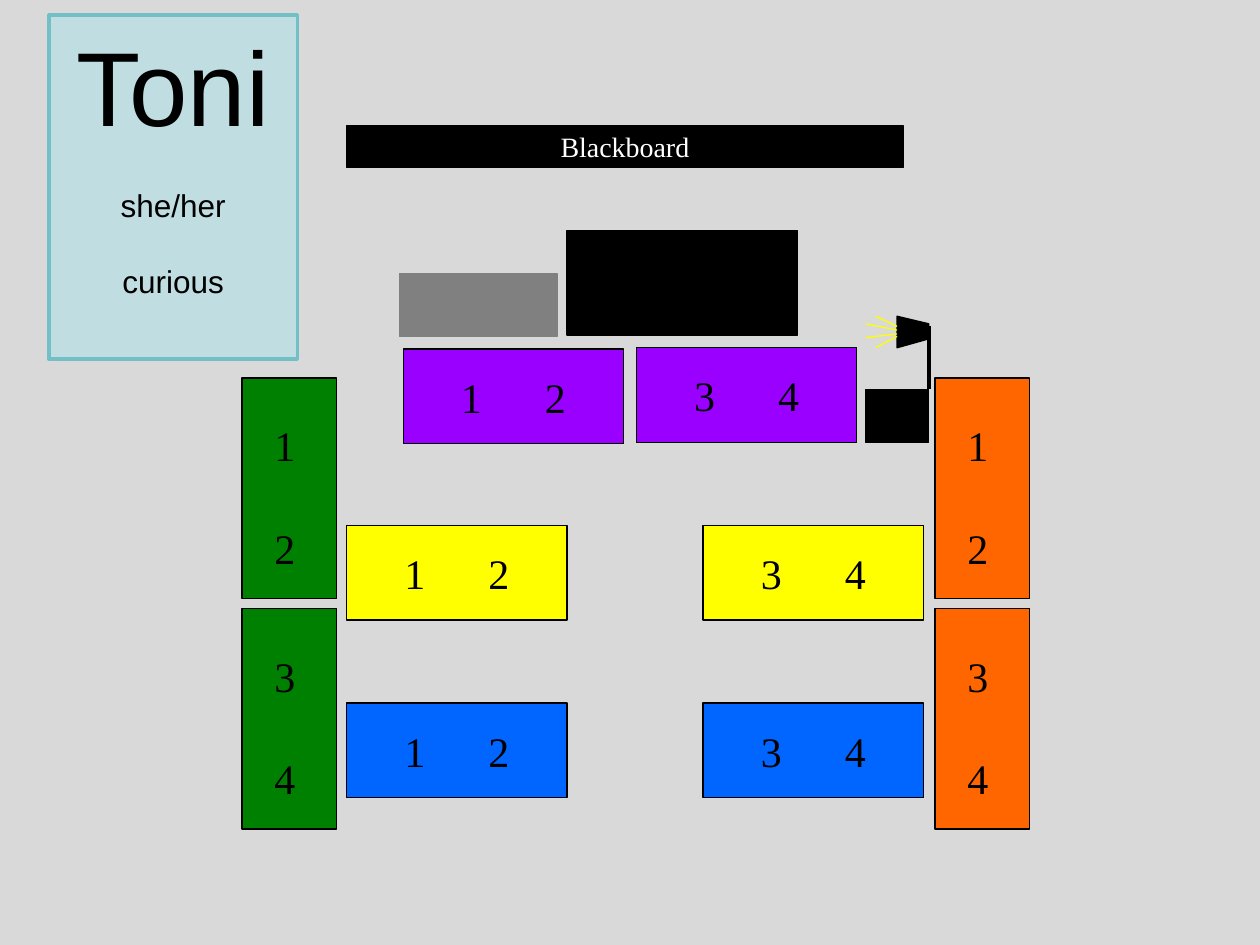
import pptx
import pptx.util
import pptx.dml.color
import pptx.enum.shapes
import pptx.enum.text
import pptx.oxml
import pptx.oxml.ns
from pptx.util import Inches

HUES = {
    "wall": "D9D9D9", "black": "000000", "white": "FFFFFF", "gray": "808080",
    "purple": "9900FF", "blue": "0066FF", "yellow": "FFFF00",
    "green": "008000", "orange": "FF6600", "card": "BBE0E3", "edge": "72BFC5",
}
SERIF, SANS = "Times New Roman", "Arial"
LONG, SHORT = 1.75, 0.75
MIDDLE = pptx.enum.text.MSO_ANCHOR.MIDDLE
TOP = pptx.enum.text.MSO_ANCHOR.TOP
CENTER = pptx.enum.text.PP_ALIGN.CENTER
LEFT = pptx.enum.text.PP_ALIGN.LEFT


def color(name):
    return pptx.dml.color.RGBColor.from_string(HUES[name])


def paint(shape, fill, line="black", width=0.75):
    shape.shadow.inherit = False
    shape.fill.solid()
    shape.fill.fore_color.rgb = color(fill)
    if line:
        shape.line.color.rgb = color(line)
        shape.line.width = pptx.util.Pt(width)
    else:
        shape.line.fill.background()


def box(slide, x, y, w, h, fill, line="black", width=0.75):
    kind = pptx.enum.shapes.MSO_SHAPE.RECTANGLE
    shape = slide.shapes.add_shape(kind, Inches(x), Inches(y), Inches(w), Inches(h))
    paint(shape, fill, line, width)
    return shape


def frame(shape, anchor, wrap):
    text = shape.text_frame
    text.vertical_anchor = anchor
    text.word_wrap = wrap
    return text


def line_of(text, first, align, gap=0):
    para = text.paragraphs[0] if first else text.add_paragraph()
    para.alignment = align
    para.space_before = pptx.util.Pt(gap)
    return para


def write(para, words, size, font=SERIF, hue="black"):
    run = para.add_run()
    run.text = words
    run.font.size = pptx.util.Pt(size)
    run.font.name = font
    run.font.color.rgb = color(hue)
    return run


def desk(slide, x, y, fill, seats):
    shape = box(slide, x, y, LONG, SHORT, fill)
    para = line_of(frame(shape, MIDDLE, False), True, CENTER)
    write(para, seats[0], 24)
    space = write(para, " ", 24)
    space.font._element.set("spc", "3000")
    write(para, seats[1], 24)


def side(slide, x, y, fill, seats):
    shift = (LONG - SHORT) / 2
    shape = box(slide, x - shift, y + shift, LONG, SHORT, fill)
    shape.rotation = 270
    label = box(slide, x + 0.16, y + 0.25, 0.37, 1.3, fill, None)
    text = frame(label, TOP, True)
    text.margin_top = Inches(0.08)
    for i, seat in enumerate(seats):
        write(line_of(text, i == 0, LEFT, 30 * i), seat, 24)


def stroke(slide, start, end, hue, width=0.75):
    kind = pptx.enum.shapes.MSO_CONNECTOR.STRAIGHT
    ends = [Inches(n) for n in (*start, *end)]
    line = slide.shapes.add_connector(kind, *ends)
    line.line.color.rgb = color(hue)
    line.line.width = pptx.util.Pt(width)
    props = line._element.spPr
    props.append(props.makeelement(pptx.oxml.ns.qn("a:effectLst"), {}))


def lamp(slide):
    box(slide, 6.87, 3.09, 0.5, 0.42, "black")
    stroke(slide, (7.37, 3.09), (7.37, 2.59), "black", 2.25)
    points = [(7.12, 2.76), (7.37, 2.69), (7.37, 2.57), (7.12, 2.51)]
    points = [(Inches(x), Inches(y)) for x, y in points]
    path = slide.shapes.build_freeform(*points[0])
    path.add_line_segments(points[1:], close=True)
    paint(path.convert_to_shape(), "black")
    rays = [
        ((7.12, 2.59), (6.95, 2.51)), ((7.12, 2.67), (6.95, 2.76)),
        ((6.87, 2.57), (7.12, 2.62)), ((6.87, 2.68), (7.12, 2.65)),
    ]
    for start, end in rays:
        stroke(slide, start, end, "yellow")


def board(slide):
    shape = box(slide, 2.75, 1, 4.42, 0.33, "black")
    para = line_of(frame(shape, MIDDLE, False), True, CENTER)
    write(para, "Blackboard", 16, hue="white")


def card(slide):
    shape = box(slide, 0.39, 0.12, 1.97, 2.73, "card", "edge", 2)
    tint = shape.fill._xPr.find(".//" + pptx.oxml.ns.qn("a:srgbClr"))
    tint.append(tint.makeelement(pptx.oxml.ns.qn("a:alpha"), {"val": "82000"}))
    text = frame(shape, TOP, True)
    rows = [("Toni", 60, 0), ("she/her", 18, 22), ("curious", 18, 22)]
    for i, (words, size, gap) in enumerate(rows):
        write(line_of(text, i == 0, CENTER, gap), words, size, SANS)


def main():
    deck = pptx.Presentation()
    deck.slide_width, deck.slide_height = Inches(10), Inches(7.5)
    slide = deck.slides.add_slide(deck.slide_layouts[6])
    slide.background.fill.solid()
    slide.background.fill.fore_color.rgb = color("wall")

    desk(slide, 3.2, 2.77, "purple", "12")
    desk(slide, 5.05, 2.76, "purple", "34")
    for y, fill in ((4.17, "yellow"), (5.58, "blue")):
        for x, seats in ((2.75, "12"), (5.58, "34")):
            desk(slide, x, y, fill, seats)
    for x, fill in ((1.92, "green"), (7.42, "orange")):
        for y, seats in ((3, "12"), (4.83, "34")):
            side(slide, x, y, fill, seats)
    box(slide, 4.5, 1.83, 1.83, 0.83, "black")
    box(slide, 3.17, 2.17, 1.25, 0.5, "gray", "gray")
    lamp(slide)
    board(slide)
    card(slide)
    deck.save("out.pptx")


if __name__ == "__main__":
    main()
